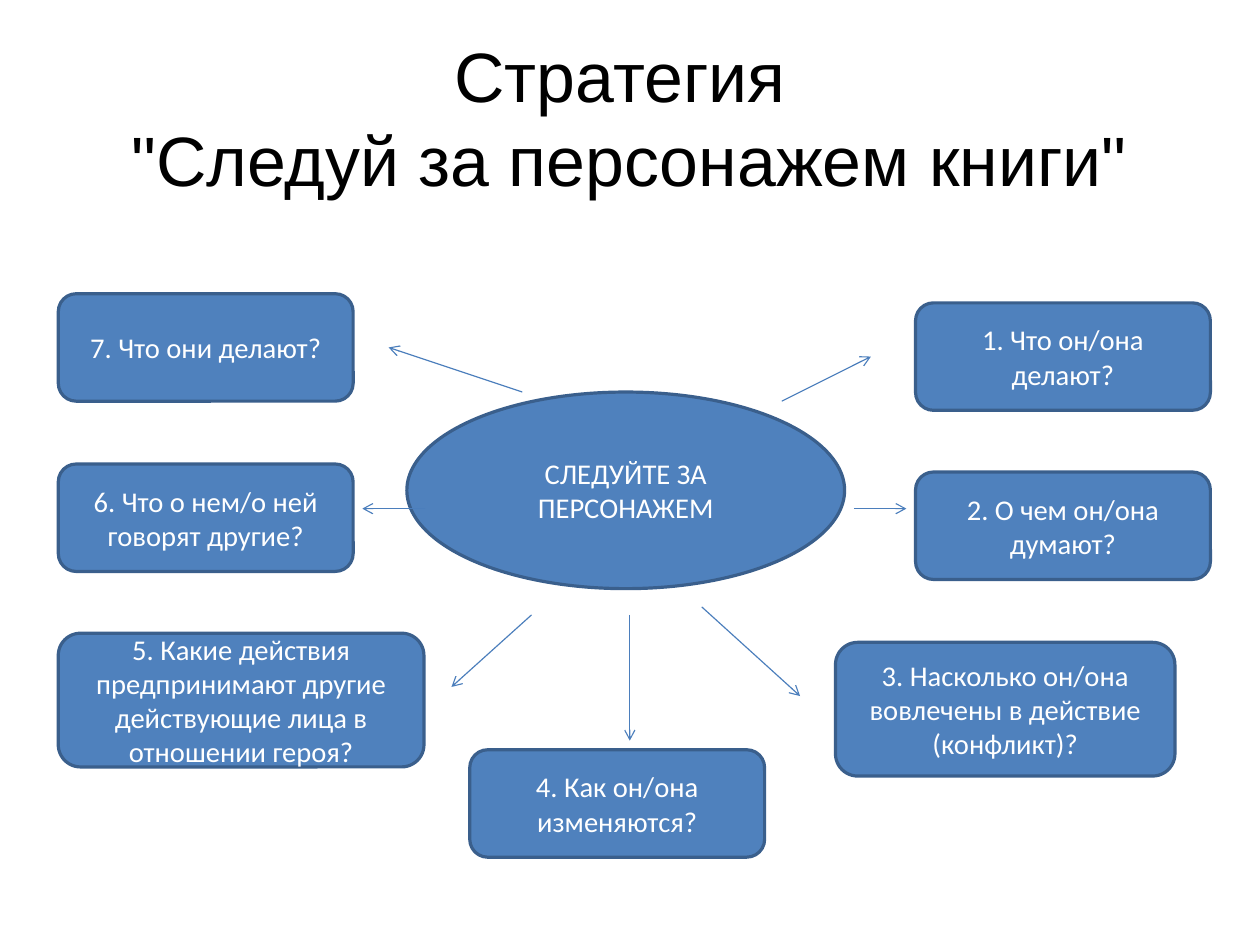
from dataclasses import dataclass

from lxml import etree
from pptx import Presentation
from pptx.dml.color import RGBColor
from pptx.enum.shapes import MSO_CONNECTOR, MSO_SHAPE
from pptx.enum.text import MSO_ANCHOR, MSO_AUTO_SIZE, PP_ALIGN
from pptx.oxml.ns import qn
from pptx.util import Inches, Pt


@dataclass(frozen=True)
class Theme:
    title_color: RGBColor = RGBColor(0x00, 0x00, 0x00)
    node_text: RGBColor = RGBColor(0xFF, 0xFF, 0xFF)
    node_fill: RGBColor = RGBColor(0x4F, 0x81, 0xBD)
    node_border: RGBColor = RGBColor(0x3A, 0x5F, 0x8C)
    arrow: RGBColor = RGBColor(0x4B, 0x7E, 0xBC)
    title_font: str = "Arial"
    node_font: str = "Calibri"
    title_size: int = 44
    node_size: int = 18
    border_width: float = 2
    arrow_width: float = 0.75


THEME = Theme()

CM_PER_INCH = 2.54
SMALL = (2.58, 0.94)
LEFT_X, RIGHT_X = 0.51, 8.01

CENTER = ("СЛЕДУЙТЕ ЗА ПЕРСОНАЖЕМ", (3.56, 3.43), (3.83, 1.72))

# Question, top-left corner, size
QUESTIONS = [
    ("1. Что он/она делают?", (RIGHT_X, 2.65), SMALL),
    ("2. О чем он/она думают?", (RIGHT_X, 4.13), SMALL),
    ("3. Насколько он/она вовлечены в действие (конфликт)?",
     (7.31, 5.62), (2.97, 1.17)),
    ("4. Как он/она изменяются?", (4.11, 6.56), SMALL),
    ("5. Какие действия предпринимают другие действующие лица "
     "в отношении героя?", (LEFT_X, 5.54), (3.2, 1.17)),
    ("6. Что о нем/о ней говорят другие?", (LEFT_X, 4.06), SMALL),
    ("7. Что они делают?", (LEFT_X, 2.57), SMALL),
]

# Start and end of the arrow to each question, in the same order
ARROWS = [
    ((6.84, 3.51), (7.62, 3.12)),
    ((7.47, 4.45), (7.93, 4.45)),
    ((6.14, 5.31), (7.00, 6.09)),
    ((5.51, 5.38), (5.51, 6.48)),
    ((4.65, 5.38), (3.95, 6.01)),
    ((3.72, 4.45), (3.17, 4.45)),
    ((4.57, 3.43), (3.40, 3.04)),
]


def inches(*values):
    return [Inches(value) for value in values]


def write_text(frame, text, *, font, size, color, inset=None):
    """Fill the frame with centred text; a vertical tab breaks the line."""
    frame.word_wrap = True
    frame.auto_size = MSO_AUTO_SIZE.NONE
    frame.vertical_anchor = MSO_ANCHOR.MIDDLE
    if inset is not None:
        frame.margin_left = frame.margin_right = Inches(inset)
        frame.margin_top = frame.margin_bottom = Inches(inset)
    paragraph = frame.paragraphs[0]
    paragraph.text = text
    paragraph.alignment = PP_ALIGN.CENTER
    for run in paragraph.runs:
        run.font.name = font
        run.font.size = Pt(size)
        run.font.color.rgb = color


def set_title(slide, text):
    title = slide.shapes.title
    title.left, title.top, title.width, title.height = inches(
        0.55, 0.33, 9.92, 1.38)
    write_text(title.text_frame, text, font=THEME.title_font,
               size=THEME.title_size, color=THEME.title_color, inset=0)


def add_node(slide, preset, text, corner, size):
    node = slide.shapes.add_shape(preset, *inches(*corner, *size))
    node.shadow.inherit = False
    node.fill.solid()
    node.fill.fore_color.rgb = THEME.node_fill
    node.line.color.rgb = THEME.node_border
    node.line.width = Pt(THEME.border_width)
    write_text(node.text_frame, text, font=THEME.node_font,
               size=THEME.node_size, color=THEME.node_text)


def add_arrow(slide, start, end):
    arrow = slide.shapes.add_connector(
        MSO_CONNECTOR.STRAIGHT, *inches(*start, *end))
    arrow.line.color.rgb = THEME.arrow
    arrow.line.width = Pt(THEME.arrow_width)
    etree.SubElement(arrow.line._get_or_add_ln(), qn("a:tailEnd"), type="arrow")
    etree.SubElement(arrow._element.spPr, qn("a:effectLst"))


def main():
    deck = Presentation()
    deck.slide_width = Inches(28 / CM_PER_INCH)
    deck.slide_height = Inches(21 / CM_PER_INCH)
    slide = deck.slides.add_slide(deck.slide_layouts[5])
    set_title(slide, "Стратегия \v\"Следуй за персонажем книги\"")
    add_node(slide, MSO_SHAPE.OVAL, *CENTER)
    for question in QUESTIONS:
        add_node(slide, MSO_SHAPE.ROUNDED_RECTANGLE, *question)
    for start, end in ARROWS:
        add_arrow(slide, start, end)
    deck.save("out.pptx")


if __name__ == "__main__":
    main()
